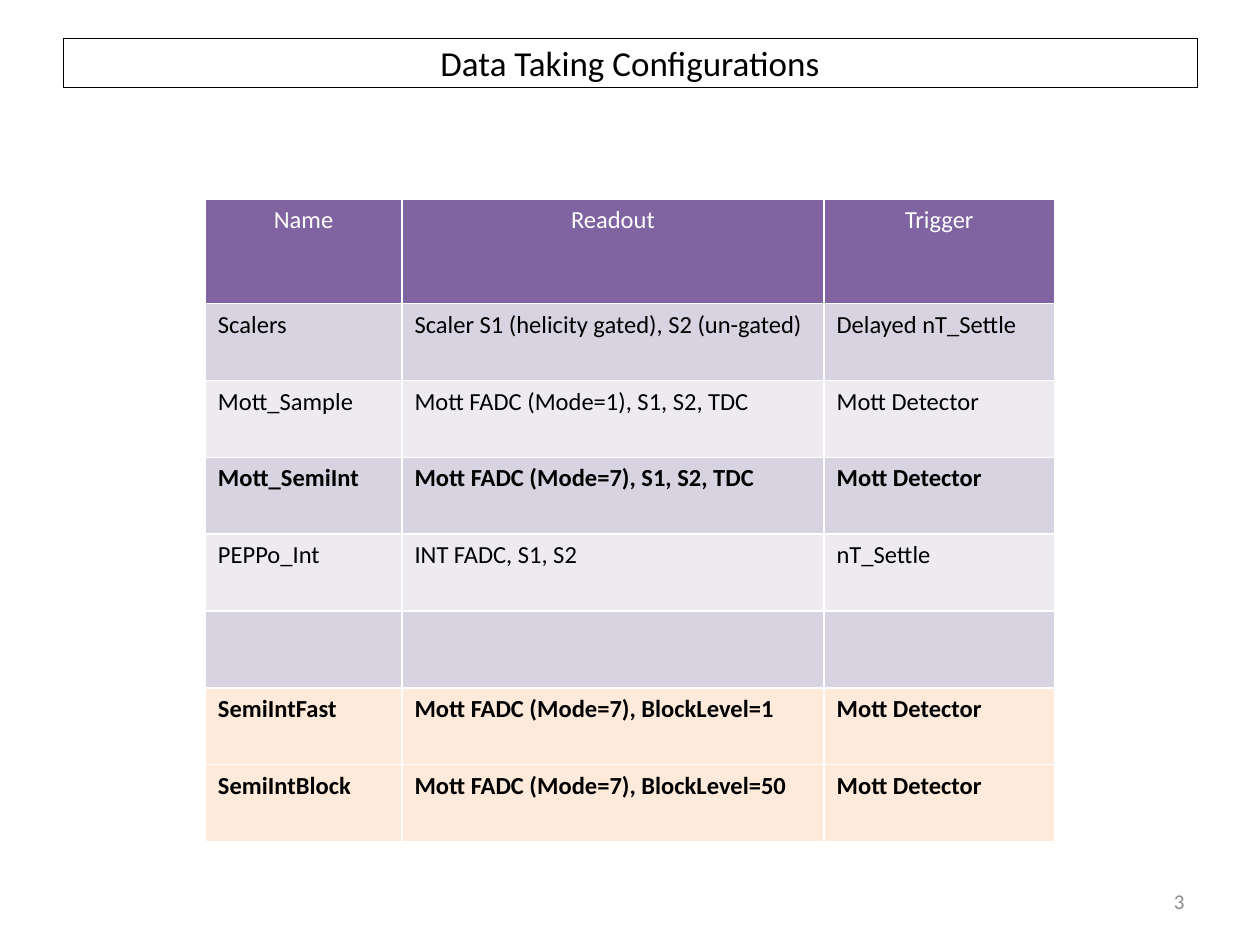
from lxml import etree
from pptx import Presentation
from pptx.dml.color import RGBColor
from pptx.enum import shapes, text
from pptx.oxml import ns
from pptx.util import Inches, Pt

HUES = {
    "head": "8064A2",
    "dark": "D8D3E0",
    "light": "EDEAF0",
    "peach": "FDEADA",
    "white": "FFFFFF",
    "black": "000000",
    "gray": "8C8C8C",
}
ROWS = [
    ("head", False, ["Name", "Readout", "Trigger"]),
    ("dark", False, ["Scalers", "Scaler S1 (helicity gated), S2 (un-gated)", "Delayed nT_Settle"]),
    ("light", False, ["Mott_Sample", "Mott FADC (Mode=1), S1, S2, TDC", "Mott Detector"]),
    ("dark", True, ["Mott_SemiInt", "Mott FADC (Mode=7), S1, S2, TDC", "Mott Detector"]),
    ("light", False, ["PEPPo_Int", "INT FADC, S1, S2", "nT_Settle"]),
    ("dark", False, ["", "", ""]),
    ("peach", True, ["SemiIntFast", "Mott FADC (Mode=7), BlockLevel=1", "Mott Detector"]),
    ("peach", True, ["SemiIntBlock", "Mott FADC (Mode=7), BlockLevel=50", "Mott Detector"]),
]
ALIGN = text.PP_ALIGN


def write(frame, words, size=14, hue="black", bold=False, align=ALIGN.LEFT,
          anchor=text.MSO_ANCHOR.MIDDLE):
    frame.word_wrap = True
    frame.vertical_anchor = anchor
    para = frame.paragraphs[0]
    para.alignment = align
    if words:
        run = para.add_run()
        run.text = words
        run.font.name = "Calibri"
        run.font.size = Pt(size)
        run.font.bold = bold
        run.font.color.rgb = RGBColor.from_string(HUES[hue])


def edge(cell, hue, width):
    props = cell._tc.get_or_add_tcPr()
    for side in ("lnL", "lnR", "lnT", "lnB"):
        line = etree.SubElement(props, ns.qn("a:" + side), w=str(Pt(width)))
        fill = etree.SubElement(line, ns.qn("a:solidFill"))
        etree.SubElement(fill, ns.qn("a:srgbClr"), val=HUES[hue])


deck = Presentation()
deck.slide_width, deck.slide_height = Inches(10), Inches(7.5)
slide = deck.slides.add_slide(deck.slide_layouts[6])

grid = slide.shapes.add_table(
    len(ROWS), 3, Inches(1.63), Inches(1.58), Inches(6.74), Inches(5.1)).table
for col, width in zip(grid.columns, (1.56, 3.35, 1.83)):
    col.width = Inches(width)
for r, (shade, bold, words) in enumerate(ROWS):
    head = r == 0
    grid.rows[r].height = Inches(0.83 if head else 0.61)
    for c, word in enumerate(words):
        cell = grid.cell(r, c)
        edge(cell, "white", 1)
        cell.fill.solid()
        cell.fill.fore_color.rgb = RGBColor.from_string(HUES[shade])
        write(cell.text_frame, word, bold=bold, hue="white" if head else "black",
              align=ALIGN.CENTER if head else ALIGN.LEFT, anchor=text.MSO_ANCHOR.TOP)

title = slide.shapes.add_shape(
    shapes.MSO_SHAPE.RECTANGLE, Inches(0.5), Inches(0.3), Inches(9), Inches(0.39))
title.shadow.inherit = False
title.fill.background()
title.line.color.rgb = RGBColor.from_string(HUES["black"])
title.line.width = Pt(0.25)
write(title.text_frame, "Data Taking Configurations", size=20, align=ALIGN.CENTER)

page = slide.shapes.add_textbox(Inches(7.17), Inches(6.95), Inches(2.33), Inches(0.4))
write(page.text_frame, "3", size=12, hue="gray", align=ALIGN.RIGHT)

deck.save("out.pptx")
